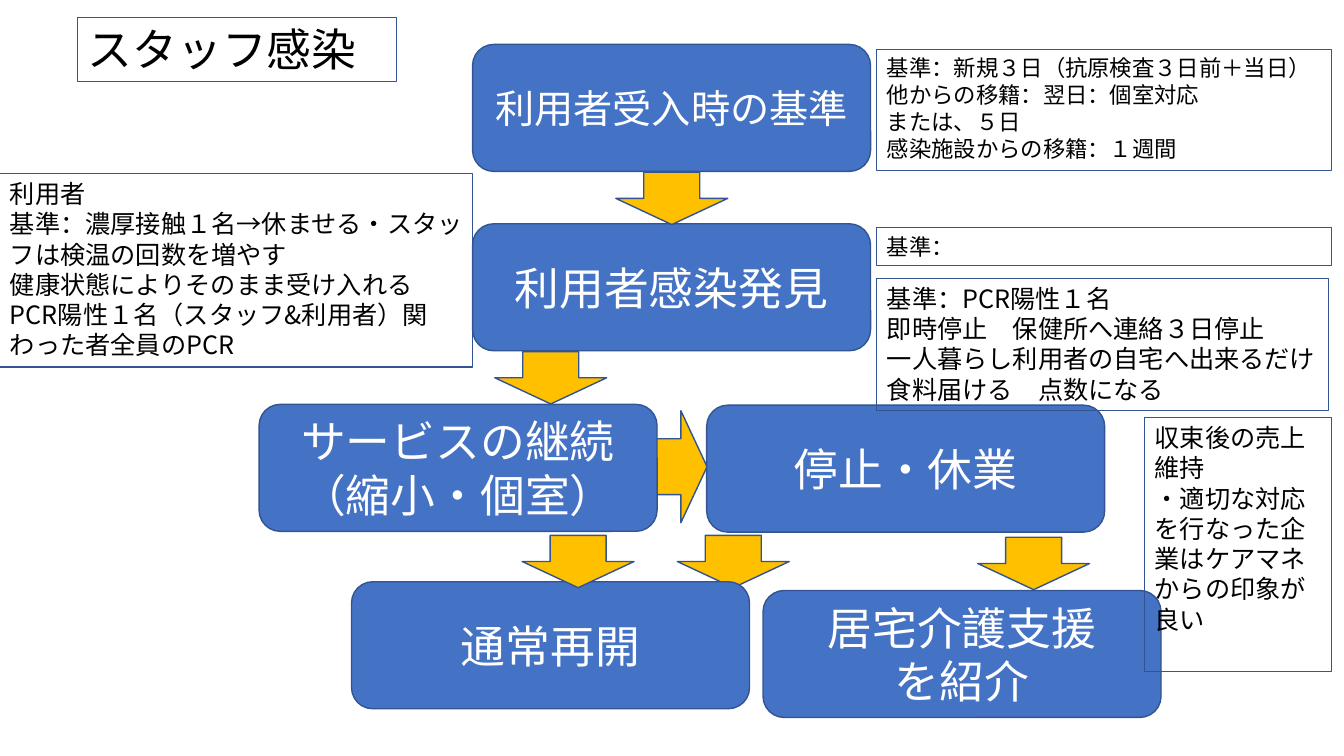
from lxml.etree import SubElement
from pptx import Presentation
from pptx.dml.color import RGBColor
from pptx.enum.shapes import MSO_SHAPE as Shape
from pptx.enum.text import MSO_ANCHOR as Anchor, MSO_AUTO_SIZE as AutoSize, PP_ALIGN as Align
from pptx.oxml.ns import qn
from pptx.util import Cm, Pt

FONT = "Noto Sans CJK JP"
BLUE, GOLD, OUTLINE = "4472C4", "FFC000", "325491"
WHITE, BLACK = "FFFFFF", "000000"
STEP_SIZE = (10.03, 3.2)
ARROW_SIZE = (2.82, 1.32)


def color(hex_code):
    return RGBColor.from_string(hex_code)


def outline(part, width):
    part.line.color.rgb = color(OUTLINE)
    part.line.width = Pt(width)


def write(frame, lines, size, ink, align):
    frame.word_wrap = True
    for i, line in enumerate(lines):
        paragraph = frame.paragraphs[0] if i == 0 else frame.add_paragraph()
        paragraph.alignment = align
        run = paragraph.add_run()
        run.text = line
        run.font.size = Pt(size)
        run.font.name = FONT
        run.font.color.rgb = color(ink)
        SubElement(run.font._element, qn("a:ea"), typeface=FONT)


def add_block(slide, kind, box, fill):
    block = slide.shapes.add_shape(kind, *map(Cm, box))
    block.shadow.inherit = False
    block.fill.solid()
    block.fill.fore_color.rgb = color(fill)
    outline(block, 1)
    return block


def add_step(slide, left, top, lines, size=32):
    step = add_block(slide, Shape.ROUNDED_RECTANGLE, (left, top, *STEP_SIZE), BLUE)
    step.text_frame.vertical_anchor = Anchor.MIDDLE
    write(step.text_frame, lines, size, WHITE, Align.CENTER)


def add_arrow(slide, left, top, rotation=0):
    arrow = add_block(slide, Shape.DOWN_ARROW, (left, top, *ARROW_SIZE), GOLD)
    arrow.rotation = rotation


def add_note(slide, box, lines, size):
    note = slide.shapes.add_textbox(*map(Cm, box))
    note.fill.background()
    outline(note, 0.75)
    write(note.text_frame, lines, size, BLACK, Align.LEFT)
    note.text_frame.auto_size = AutoSize.SHAPE_TO_FIT_TEXT


def build_flow(slide):
    # Acceptance and discovery
    add_step(slide, 11.91, 5.64, ["利用者感染発見"])
    add_step(slide, 11.91, 1.12, ["利用者受入時の基準"], 28)
    add_arrow(slide, 15.52, 4.34)
    add_arrow(slide, 12.47, 8.86)

    # Continue or stop
    add_arrow(slide, 15.75, 11.1, rotation=270)
    add_step(slide, 17.81, 10.21, ["停止・休業"])
    add_step(slide, 6.53, 10.19, ["サービスの継続", "（縮小・個室）"])

    # Outcomes
    add_arrow(slide, 17.07, 13.49)
    add_step(slide, 8.86, 14.66, ["通常再開"])
    add_arrow(slide, 24.64, 13.54)
    add_step(slide, 19.23, 14.88, ["居宅介護支援", "を紹介"])
    add_arrow(slide, 13.16, 13.49)


def build_notes(slide):
    # Title
    add_note(slide, (1.96, 0.43, 8.03, 1.63), ["スタッフ感染"], 32)

    # Criteria to the right of the flow
    add_note(slide, (22.1, 1.24, 11.46, 3.07), [
        "基準：新規３日（抗原検査３日前＋当日）",
        "他からの移籍：翌日：個室対応",
        "または、５日",
        "感染施設からの移籍：１週間",
    ], 16)
    add_note(slide, (22.1, 7.01, 11.38, 3.33), [
        "基準：PCR陽性１名",
        "即時停止　保健所へ連絡３日停止",
        "一人暮らし利用者の自宅へ出来るだけ食料届ける　点数になる",
    ], 18)
    add_note(slide, (22.1, 5.74, 11.46, 0.94), ["基準："], 16)

    # User criteria on the left
    add_note(slide, (0, 4.37, 11.91, 4.88), [
        "利用者",
        "基準：濃厚接触１名→休ませる・スタッフは検温の回数を増やす",
        "健康状態によりそのまま受け入れる",
        "PCR陽性１名（スタッフ&利用者）関わった者全員のPCR",
    ], 18)

    # Sales after the outbreak
    add_note(slide, (28.85, 10.52, 4.7, 6.4), [
        "収束後の売上維持",
        "・適切な対応を行なった企業はケアマネからの印象が良い",
    ], 18)


def main():
    deck = Presentation()
    deck.slide_width, deck.slide_height = Cm(33.87), Cm(19.05)
    slide = deck.slides.add_slide(deck.slide_layouts[6])
    build_flow(slide)
    build_notes(slide)
    deck.save("out.pptx")


if __name__ == "__main__":
    main()
